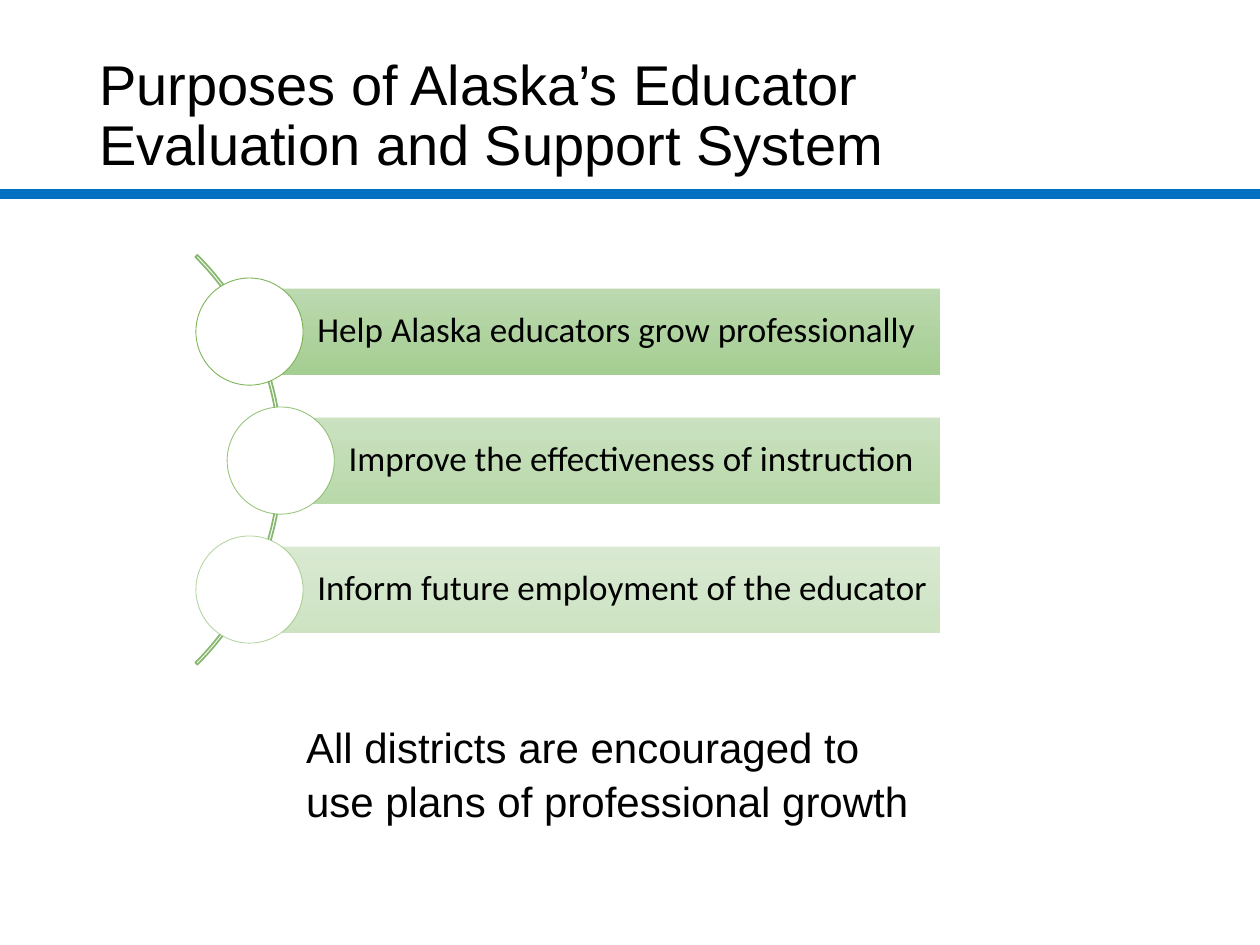
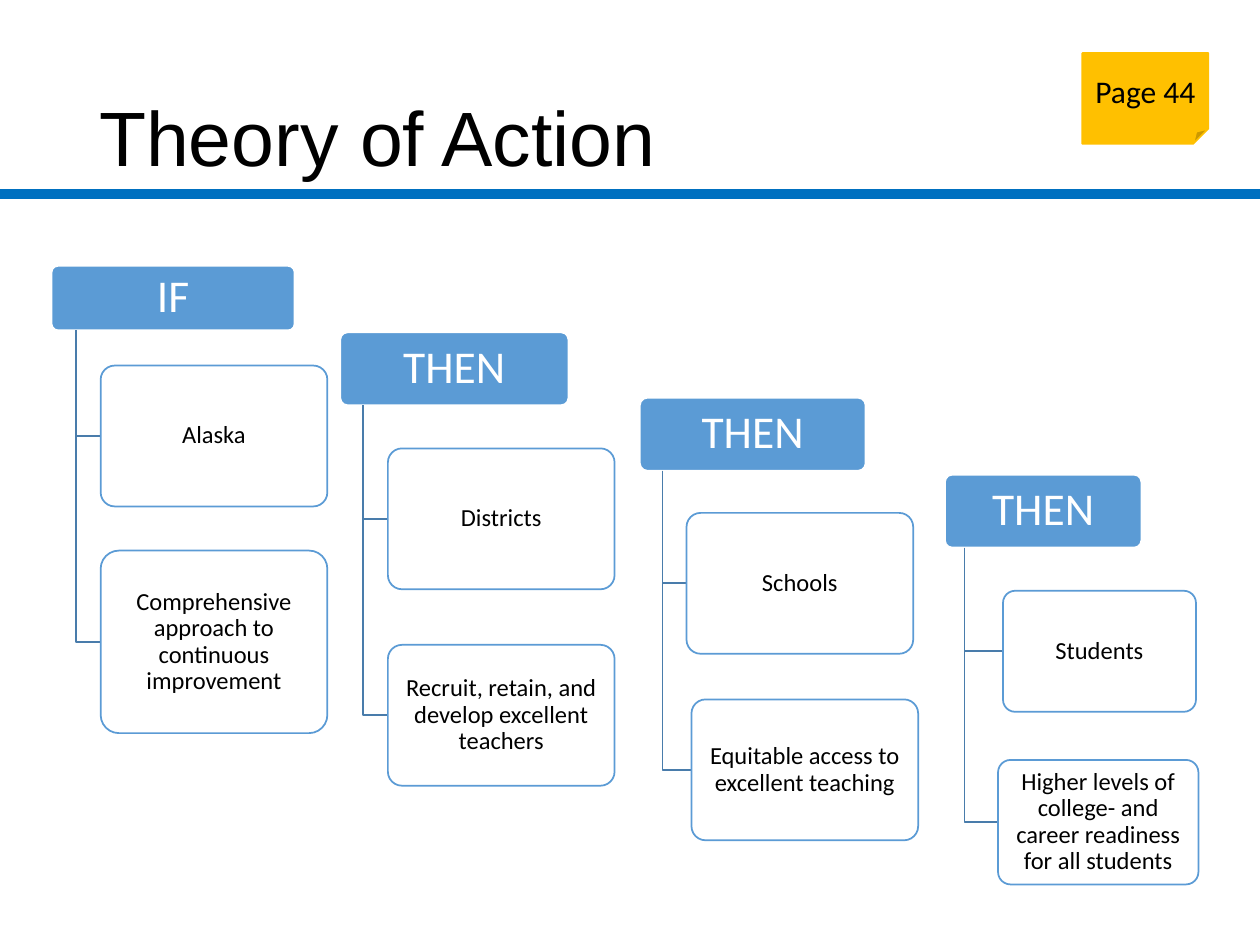
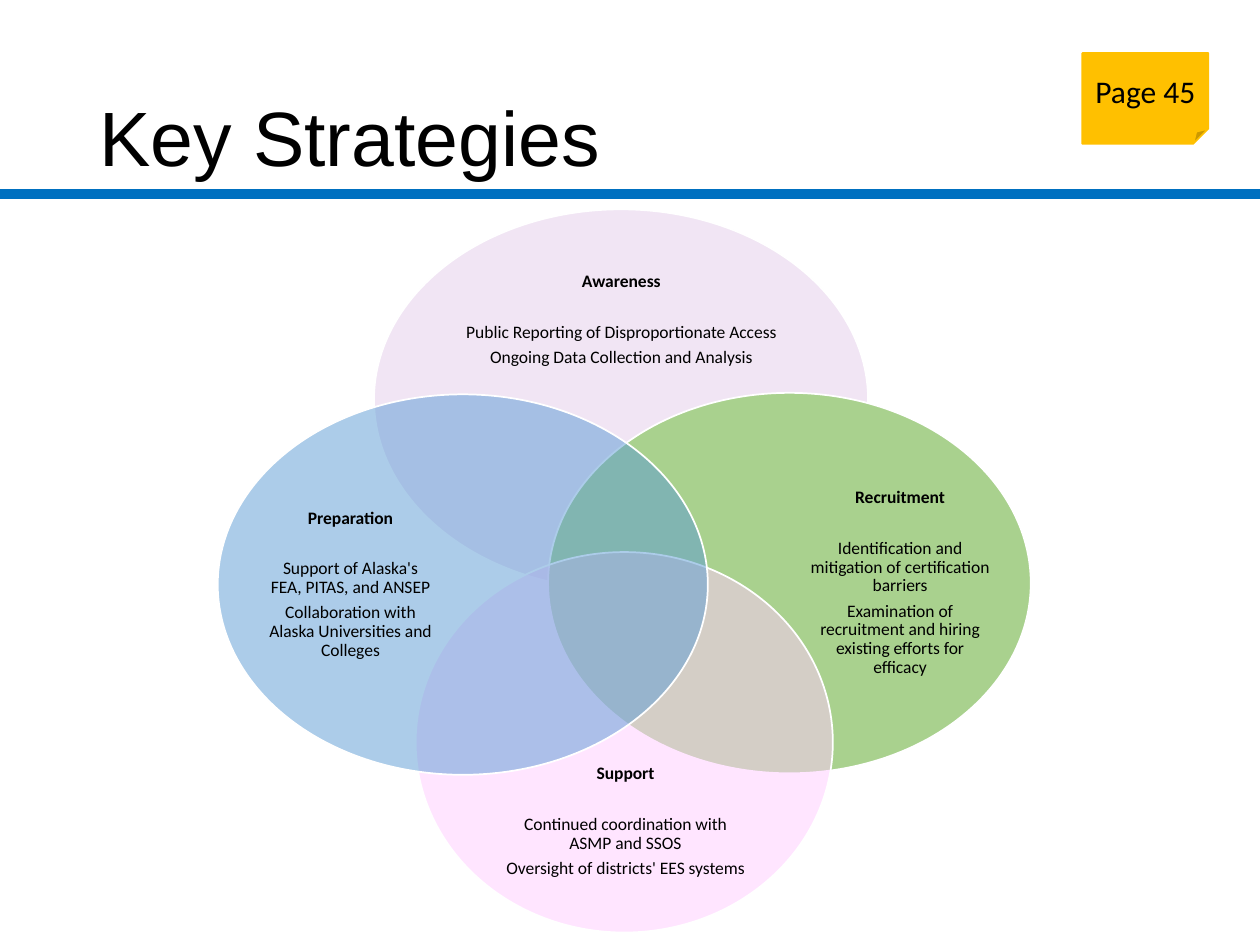
from lxml import etree
from pptx import Presentation
from pptx.dml.color import RGBColor
from pptx.enum import shapes, text
from pptx.oxml.ns import qn
from pptx.util import Cm, Pt

BLACK, WHITE = "000000", "FFFFFF"
BAND_BLUE, STEP_BLUE, RAIL_BLUE = "0070C0", "5B9BD5", "497CAB"
TAG_GOLD, ARC_GREEN, RING_GREEN = "FFC000", "88B76F", "70AD47"
BAR_GRADIENT = ("B5D5A7", "9CC987")
HEADING_FONT, BODY_FONT = "Arial", "Calibri"
SLIDE_W, SLIDE_H = 25.4, 19.05
BAND_Y = 3.91
SHAPE = shapes.MSO_SHAPE
CENTER = text.PP_ALIGN.CENTER

# Places are (left, top, width, height) in centimetres.
PURPOSE_TITLE = "Purposes of Alaska’s Educator\nEvaluation and Support System"
PURPOSES = [  # wording, left edge of the bar, opacity
    ("Help Alaska educators grow professionally", 5.03, 90),
    ("Improve the effectiveness of instruction", 5.66, 70),
    ("Inform future employment of the educator", 5.03, 50),
]
BAR_TOP, BAR_STEP, BAR_H, BAR_RIGHT, RING = 5.82, 2.6, 1.73, 18.95, 2.16
ARC_PLACE = (-5.99, 3.43, 11.68, 11.68)
ENCOURAGEMENT = "All districts are encouraged to use plans of professional growth"

CHAIN = [  # header, its place, then the cards below it
    ("IF", (1.04, 5.36, 4.9, 1.3), [
        ("Alaska", (2.03, 7.37, 4.57, 2.84)),
        ("Comprehensive approach to continuous improvement", (2.03, 11.1, 4.57, 3.68))]),
    ("THEN", (6.86, 6.7, 4.6, 1.47), [
        ("Districts", (7.82, 9.04, 4.57, 2.84)),
        ("Recruit, retain, and develop excellent teachers", (7.82, 13, 4.57, 2.84))]),
    ("THEN", (12.9, 8.02, 4.55, 1.47), [
        ("Schools", (13.84, 10.34, 4.57, 2.84)),
        ("Equitable access to excellent teaching", (13.94, 14.1, 4.57, 2.84))]),
    ("THEN", (19.05, 9.57, 3.96, 1.47), [
        ("Students", (20.22, 11.91, 3.89, 2.44)),
        ("Higher levels of college- and career readiness for all students",
         (20.12, 15.32, 4.04, 2.51))]),
]

STRATEGIES = [  # heading, points, colour, opacity, ellipse place, wording place
    ("Awareness",
     ["Public Reporting of Disproportionate Access", "Ongoing Data Collection and Analysis"],
     "E4CDEB", 50, (7.54, 4.22, 9.96, 7.67), (8.69, 5.23, 7.67, 2.44)),
    ("Recruitment",
     ["Identification and mitigation of certification barriers",
      "Examination of recruitment and hiring existing efforts for efficacy"],
     "A9D18E", 100, (11.05, 7.92, 9.73, 7.67), (16.28, 8.81, 3.73, 5.89)),
    ("Support",
     ["Continued coordination with\nASMP and SSOS", "Oversight of districts' EES systems"],
     "FFCCFF", 50, (8.38, 11.13, 8.41, 7.67), (9.37, 15.34, 6.48, 2.44)),
    ("Preparation",
     ["Support of Alaska's\nFEA, PITAS, and ANSEP",
      "Collaboration with\nAlaska Universities and Colleges"],
     STEP_BLUE, 50, (4.39, 7.95, 9.88, 7.67), (5.16, 8.84, 3.81, 5.89)),
]


def rgb(hex_colour):
    return RGBColor.from_string(hex_colour)


def fade(element, opacity):
    """Make every colour inside the element partly transparent."""
    if opacity < 100:
        for colour in element.iter(qn("a:srgbClr")):
            etree.SubElement(colour, qn("a:alpha"), val=str(opacity * 1000))


def add_figure(slide, preset, place, fill=None, line=None, width=1,
               fill_opacity=100, line_opacity=100):
    """Add a preset shape; a pair of fill colours gives a downward gradient."""
    figure = slide.shapes.add_shape(preset, *map(Cm, place))
    figure.shadow.inherit = False
    if fill is None:
        figure.fill.background()
    elif isinstance(fill, tuple):
        figure.fill.gradient()
        figure.fill.gradient_angle = 270
        for stop, colour in zip(figure.fill.gradient_stops, fill):
            stop.color.rgb = rgb(colour)
    else:
        figure.fill.solid()
        figure.fill.fore_color.rgb = rgb(fill)
    fade(figure.element.spPr, fill_opacity)
    if line is None:
        figure.line.fill.background()
    else:
        figure.line.color.rgb = rgb(line)
        figure.line.width = Pt(width)
        fade(figure.element.spPr.find(qn("a:ln")), line_opacity)
    return figure


def write(holder, paragraphs, size, colour=BLACK, font=BODY_FONT, align=None, spacing=0.9,
          insets=(0.25, 0.13, 0.25, 0.13), anchor=text.MSO_ANCHOR.MIDDLE):
    """Fill a shape with (wording, bold, points of space after) paragraphs."""
    frame = holder.text_frame
    frame.word_wrap = True
    frame.vertical_anchor = anchor
    frame.margin_left, frame.margin_top, frame.margin_right, frame.margin_bottom = map(Cm, insets)
    for index, (wording, bold, after) in enumerate(paragraphs):
        paragraph = frame.add_paragraph() if index else frame.paragraphs[0]
        paragraph.alignment = align or text.PP_ALIGN.LEFT
        paragraph.line_spacing = spacing
        paragraph.space_after = Pt(after)
        for number, part in enumerate(wording.split("\n")):
            if number:
                paragraph.add_line_break()
            run = paragraph.add_run()
            run.text = part
            run.font.name, run.font.size, run.font.bold = font, Pt(size), bold
            run.font.color.rgb = rgb(colour)


def add_words(slide, place, paragraphs, size, **style):
    write(slide.shapes.add_textbox(*map(Cm, place)), paragraphs, size, **style)


def start_slide(deck, title, size=44, title_top=1.02, page=None):
    """Add a slide with the blue band, the title and the page tag."""
    slide = deck.slides.add_slide(deck.slide_layouts[6])
    band = slide.shapes.add_connector(shapes.MSO_CONNECTOR.STRAIGHT, Cm(0), Cm(BAND_Y),
                                      Cm(SLIDE_W), Cm(BAND_Y))
    band.line.color.rgb = rgb(BAND_BLUE)
    band.line.width = Pt(6)
    etree.SubElement(band.element.spPr, qn("a:effectLst"))
    if page:
        tag = add_figure(slide, SHAPE.FOLDED_CORNER, (21.82, 1.07, 2.54, 1.83),
                         TAG_GOLD, TAG_GOLD)
        write(tag, [(page, False, 0)], 18, align=CENTER, spacing=1, insets=(0, 0.13, 0, 0.13))
    add_words(slide, (1.75, title_top, 21.89, 3.68), [(title, False, 0)], size,
              font=HEADING_FONT)
    return slide


def add_purposes(deck):
    slide = start_slide(deck, PURPOSE_TITLE, size=32, title_top=0.53)
    arc = add_figure(slide, SHAPE.BLOCK_ARC, ARC_PLACE, line=ARC_GREEN)
    for index, value in enumerate((189, 27, 0.005)):
        arc.adjustments[index] = value
    for index, (purpose, left, opacity) in enumerate(PURPOSES):
        top = BAR_TOP + index * BAR_STEP
        bar = add_figure(slide, SHAPE.RECTANGLE, (left, top, BAR_RIGHT - left, BAR_H),
                         BAR_GRADIENT, fill_opacity=opacity)
        write(bar, [(purpose, False, 0)], 20, insets=(1.37, 0.15, 0.15, 0.15))
        ring_place = (left - RING / 2, top + (BAR_H - RING) / 2, RING, RING)
        add_figure(slide, SHAPE.OVAL, ring_place, WHITE, RING_GREEN, 0.5, line_opacity=opacity)
    add_words(slide, (5.92, 14.35, 13.13, 2.46), [(ENCOURAGEMENT, False, 0)], 24,
              font=HEADING_FONT, spacing=1.07, anchor=text.MSO_ANCHOR.TOP)


def add_step(slide, wording, place, size, colour, insets, **paint):
    step = add_figure(slide, SHAPE.ROUNDED_RECTANGLE, place, **paint)
    step.adjustments[0] = 0.1
    write(step, [(wording, False, 0)], size, colour, align=CENTER, insets=insets)


def add_rail(slide, header_place, card_place):
    """Draw the elbow from under a header to the middle of a card's left side."""
    left, top, width, height = header_place
    rail_x = Cm(left + width / 10)
    card_y = Cm(card_place[1] + card_place[3] / 2)
    builder = slide.shapes.build_freeform(rail_x, Cm(top + height))
    builder.add_line_segments([(rail_x, card_y), (Cm(card_place[0]), card_y)], close=False)
    rail = builder.convert_to_shape()
    rail.shadow.inherit = False
    rail.fill.background()
    rail.line.color.rgb = rgb(RAIL_BLUE)
    rail.line.width = Pt(1)


def add_theory(deck):
    slide = start_slide(deck, "Theory of Action", page="Page 44")
    for header, header_place, cards in CHAIN:
        add_step(slide, header, header_place, 26, WHITE, (0.13, 0.1, 0.13, 0.1),
                 fill=STEP_BLUE, line=WHITE)
        for card, card_place in cards:
            add_rail(slide, header_place, card_place)
            add_step(slide, card, card_place, 14, BLACK, (0.08, 0.05, 0.08, 0.05),
                     fill=WHITE, line=STEP_BLUE, fill_opacity=90)


def add_strategies(deck):
    slide = start_slide(deck, "Key Strategies", page="Page 45")
    for heading, points, colour, opacity, ellipse_place, words_place in STRATEGIES:
        add_figure(slide, SHAPE.OVAL, ellipse_place, colour, WHITE, fill_opacity=opacity)
        paragraphs = [(heading, True, 18)] + [(point, False, 3.5) for point in points]
        add_words(slide, words_place, paragraphs, 10, align=CENTER, insets=(0, 0, 0, 0))


def main():
    deck = Presentation()
    deck.slide_width, deck.slide_height = Cm(SLIDE_W), Cm(SLIDE_H)
    add_purposes(deck)
    add_theory(deck)
    add_strategies(deck)
    deck.save("out.pptx")


if __name__ == "__main__":
    main()
